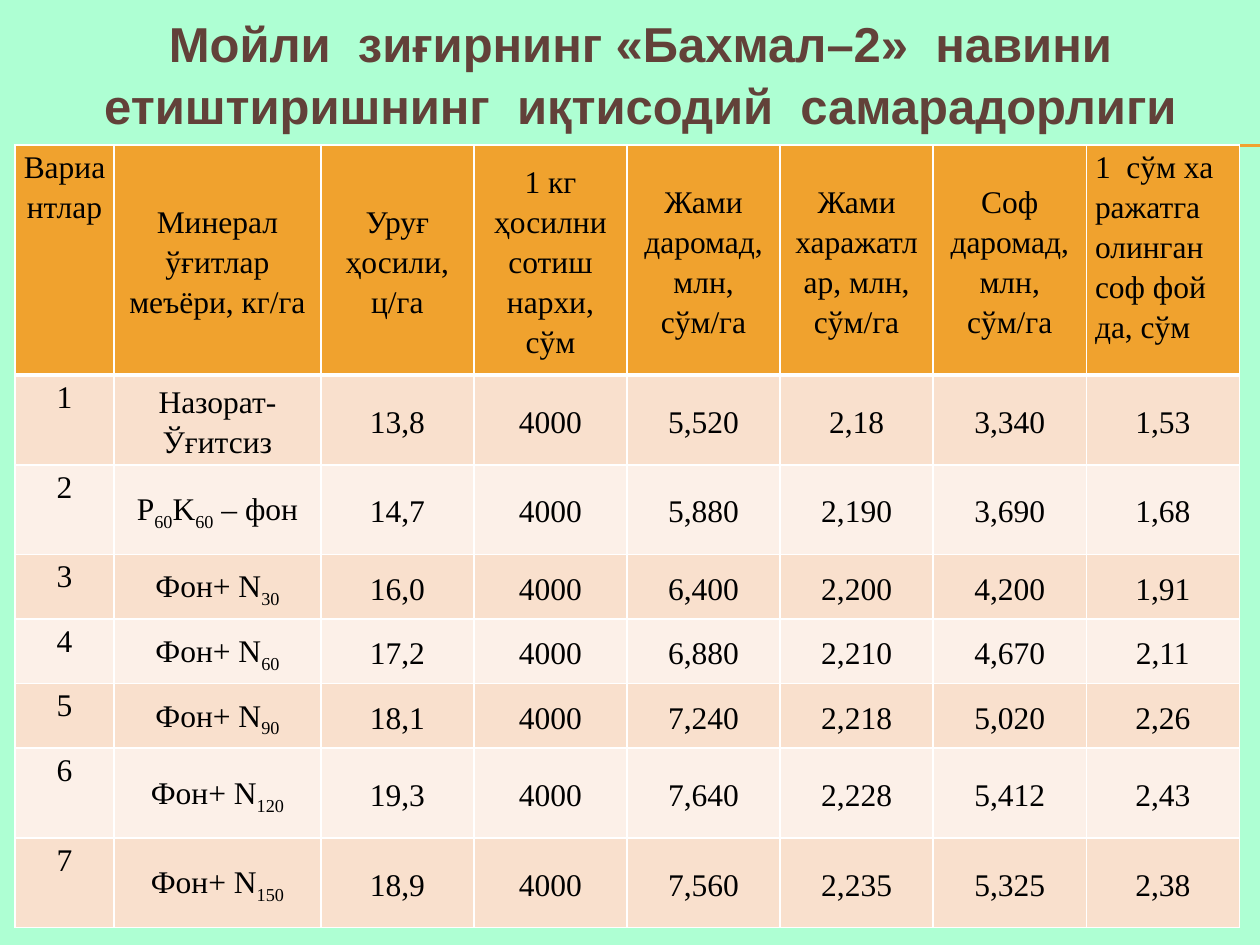
import pptx
import pptx.util
import pptx.dml.color
import pptx.enum.shapes
import pptx.enum.text
import pptx.oxml
import pptx.oxml.ns
from lxml import etree

Pt = pptx.util.Pt
ALIGN = pptx.enum.text.PP_ALIGN
ANCHOR = pptx.enum.text.MSO_ANCHOR

COLORS = {
    "background": "AEFFD3",
    "title": "624139",
    "accent": "F0A22E",
    "odd": "F9E0CD",
    "even": "FCF0E8",
    "border": "FFFFFF",
    "text": "000000",
}
TITLE_FONT = {"name": "Arial", "size": Pt(28), "bold": True}
CELL_FONT = {"name": "Times New Roman", "size": Pt(18), "bold": False}
CELL_MARGINS = {
    "margin_left": Pt(5),
    "margin_right": Pt(5),
    "margin_top": Pt(0),
    "margin_bottom": Pt(0),
}
COL_WIDTHS = [56.6, 118.2] + [87.5] * 6
ROW_HEIGHTS = [131.5] + [51.3] * 2 + [36.9] * 3 + [51.3] * 2
HEADER = [
    "Вариантлар",
    "Минерал ўғитлар меъёри, кг/га",
    "Уруғ ҳосили, ц/га",
    "1 кг ҳосилни сотиш нархи, сўм",
    "Жами даромад, млн, сўм/га",
    "Жами харажатлар, млн, сўм/га",
    "Соф даромад, млн, сўм/га",
    "1  сўм ха ражатга олинган соф фой да, сўм",
]
VARIANTS = [
    ["Назорат-Ўғитсиз", "13,8", "4000", "5,520", "2,18", "3,340", "1,53"],
    ["P|60|K|60| – фон", "14,7", "4000", "5,880", "2,190", "3,690", "1,68"],
    ["Фон+ N|30", "16,0", "4000", "6,400", "2,200", "4,200", "1,91"],
    ["Фон+ N|60", "17,2", "4000", "6,880", "2,210", "4,670", "2,11"],
    ["Фон+ N|90", "18,1", "4000", "7,240", "2,218", "5,020", "2,26"],
    ["Фон+ N|120", "19,3", "4000", "7,640", "2,228", "5,412", "2,43"],
    ["Фон+ N|150", "18,9", "4000", "7,560", "2,235", "5,325", "2,38"],
]


def rgb(key):
    return pptx.dml.color.RGBColor.from_string(COLORS[key])


def apply(obj, values):
    for name, value in values.items():
        setattr(obj, name, value)


def add_run(p, text, font, color):
    r = p.add_run()
    r.text = text
    apply(r.font, font)
    r.font.color.rgb = rgb(color)
    return r


def set_borders(cell, widths):
    tcPr = cell._tc.get_or_add_tcPr()
    for i, (side, width) in enumerate(widths.items()):
        ln = pptx.oxml.parse_xml(
            f'<a:ln{side} {pptx.oxml.ns.nsdecls("a")} w="{Pt(width)}">'
            f'<a:solidFill><a:srgbClr val="{COLORS["border"]}"/></a:solidFill>'
            f'</a:ln{side}>'
        )
        tcPr.insert(i, ln)


def fill_cell(cell, text, fill, align, anchor):
    apply(cell, CELL_MARGINS)
    cell.vertical_anchor = anchor
    cell.fill.solid()
    cell.fill.fore_color.rgb = rgb(fill)
    p = cell.text_frame.paragraphs[0]
    apply(p, {"alignment": align, "line_spacing": 1.15})
    for i, part in enumerate(text.split("|")):
        r = add_run(p, part, CELL_FONT, "text")
        if i % 2:
            r.font._element.set("baseline", "-25000")


def add_rules(s, left, top, width):
    for y in (top, top + 0.7):
        line = s.shapes.add_connector(
            pptx.enum.shapes.MSO_CONNECTOR.STRAIGHT,
            Pt(left), Pt(y), Pt(left + width), Pt(y),
        )
        line.line.color.rgb = rgb("accent")
        line.line.width = Pt(0.75)
        etree.SubElement(line._element.spPr, pptx.oxml.ns.qn("a:effectLst"))


def add_title(s, left, top, width, height):
    sp = s.shapes.add_textbox(Pt(left), Pt(top), Pt(width), Pt(height))
    tf = sp.text_frame
    apply(tf, {"word_wrap": True, "vertical_anchor": ANCHOR.MIDDLE})
    p = tf.paragraphs[0]
    apply(p, {"alignment": ALIGN.CENTER, "line_spacing": 1.05})
    text = "Мойли  зиғирнинг «Бахмал–2»  навини етиштиришнинг  иқтисодий  самарадорлиги"
    add_run(p, text, TITLE_FONT, "title")


def add_results_table(s, left, top):
    rows = [HEADER] + [[str(n)] + row for n, row in enumerate(VARIANTS, 1)]
    table = s.shapes.add_table(
        len(rows), len(HEADER), Pt(left), Pt(top),
        Pt(sum(COL_WIDTHS)), Pt(sum(ROW_HEIGHTS)),
    ).table
    for col, width in zip(table.columns, COL_WIDTHS):
        col.width = Pt(width)
    for row, height in zip(table.rows, ROW_HEIGHTS):
        row.height = Pt(height)
    last = len(HEADER) - 1
    for i, row in enumerate(rows):
        fill = "accent" if i == 0 else "odd" if i % 2 else "even"
        for j, text in enumerate(row):
            cell = table.cell(i, j)
            last_header = i == 0 and j == last
            align = ALIGN.LEFT if last_header else ALIGN.CENTER
            anchor = ANCHOR.TOP if j == 0 or last_header else ANCHOR.MIDDLE
            fill_cell(cell, text, fill, align, anchor)
            set_borders(cell, {
                "L": 1, "R": 1,
                "T": 3 if i == 1 else 1,
                "B": 3 if i == 0 else 1,
            })


def main():
    prs = pptx.Presentation()
    prs.slide_width, prs.slide_height = Pt(720), Pt(540)
    s = prs.slides.add_slide(prs.slide_layouts[6])
    s.background.fill.solid()
    s.background.fill.fore_color.rgb = rgb("background")
    add_rules(s, 40, 82.8, 680)
    add_title(s, 24, 0, 684, 82.8)
    add_results_table(s, 8.6, 82.8)
    prs.save("out.pptx")


if __name__ == "__main__":
    main()
